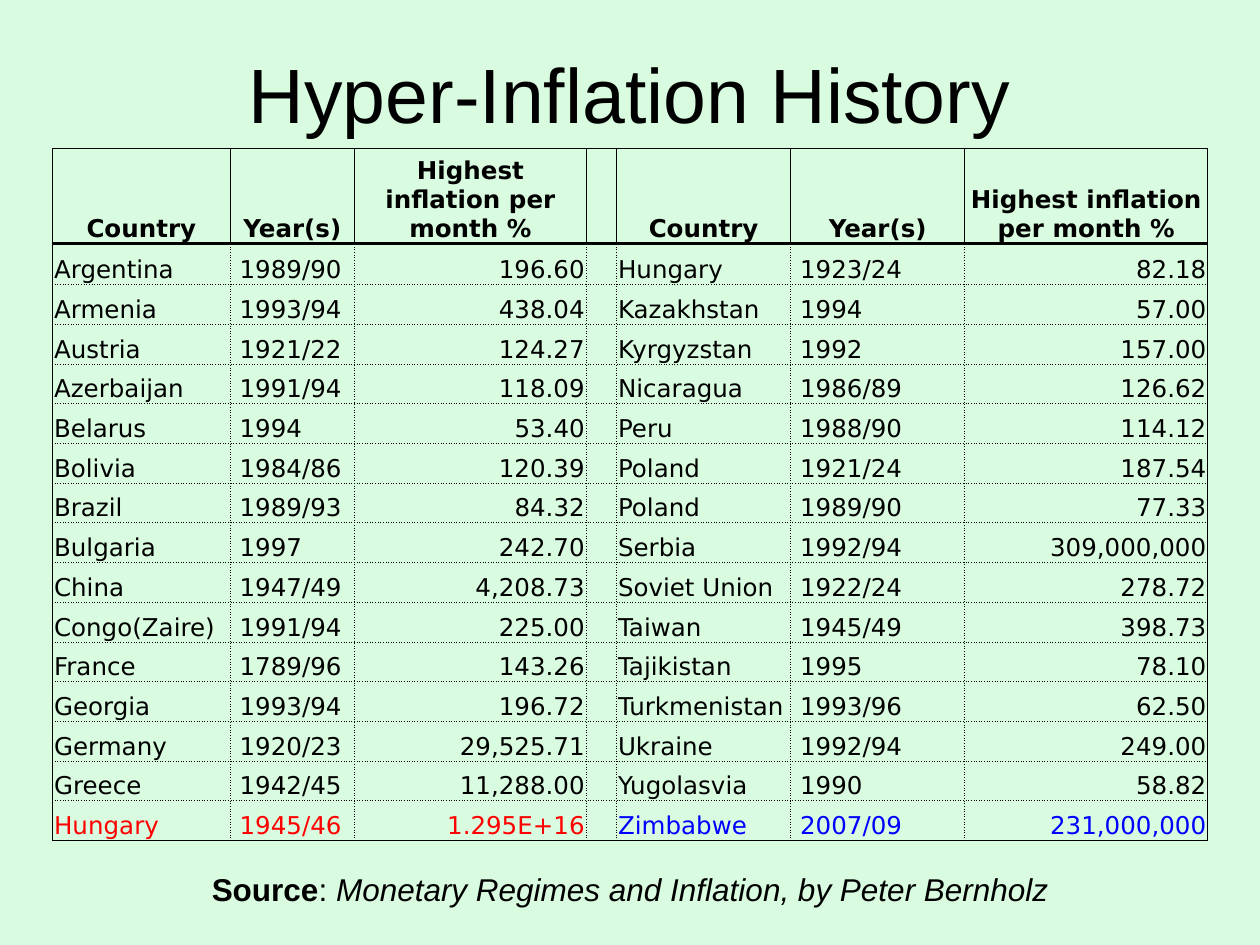
from lxml import etree
from pptx import Presentation
from pptx.dml.color import RGBColor
from pptx.enum.text import MSO_ANCHOR, PP_ALIGN
from pptx.oxml.ns import qn
from pptx.util import Cm, Pt

LEFT, CENTER, RIGHT = PP_ALIGN.LEFT, PP_ALIGN.CENTER, PP_ALIGN.RIGHT
MIDDLE, BOTTOM = MSO_ANCHOR.MIDDLE, MSO_ANCHOR.BOTTOM

MINT = RGBColor(0xD9, 0xFB, 0xDF)
BLACK = RGBColor(0, 0, 0)
RED = RGBColor(0xFF, 0, 0)
BLUE = RGBColor(0, 0, 0xFF)

SOLID, DOTTED, THICK = (0.5, "solid"), (0.5, "sysDot"), (2, "solid")

WIDTHS = [3.58, 2.51, 4.67, 0.61, 3.51, 3.51, 4.9]
HEAD_H, FIRST_H, ROW_H = 1.91, 0.84, 0.8
GAP = 3  # empty column between the two halves

HEADS = ["Country", "Year(s)", "Highest inflation per month %"]
ROWS = [
    ("Argentina", "1989/90", "196.60", "Hungary", "1923/24", "82.18"),
    ("Armenia", "1993/94", "438.04", "Kazakhstan", "1994", "57.00"),
    ("Austria", "1921/22", "124.27", "Kyrgyzstan", "1992", "157.00"),
    ("Azerbaijan", "1991/94", "118.09", "Nicaragua", "1986/89", "126.62"),
    ("Belarus", "1994", "53.40", "Peru", "1988/90", "114.12"),
    ("Bolivia", "1984/86", "120.39", "Poland", "1921/24", "187.54"),
    ("Brazil", "1989/93", "84.32", "Poland", "1989/90", "77.33"),
    ("Bulgaria", "1997", "242.70", "Serbia", "1992/94", "309,000,000"),
    ("China", "1947/49", "4,208.73", "Soviet Union", "1922/24", "278.72"),
    ("Congo(Zaire)", "1991/94", "225.00", "Taiwan", "1945/49", "398.73"),
    ("France", "1789/96", "143.26", "Tajikistan", "1995", "78.10"),
    ("Georgia", "1993/94", "196.72", "Turkmenistan", "1993/96", "62.50"),
    ("Germany", "1920/23", "29,525.71", "Ukraine", "1992/94", "249.00"),
    ("Greece", "1942/45", "11,288.00", "Yugolasvia", "1990", "58.82"),
    ("Hungary", "1945/46", "1.295E+16", "Zimbabwe", "2007/09", "231,000,000"),
]


def set_font(font, name, size, color=BLACK, bold=False):
    font.name, font.size, font.bold = name, Pt(size), bold
    font.color.rgb = color


def add_text(slide, x, y, w, h, anchor, align):
    """Add a wrapping text box and return its first paragraph."""
    frame = slide.shapes.add_textbox(Cm(x), Cm(y), Cm(w), Cm(h)).text_frame
    frame.word_wrap = True
    frame.vertical_anchor = anchor
    para = frame.paragraphs[0]
    para.alignment = align
    return para


def add_title(slide, x, y, w, h):
    para = add_text(slide, x, y, w, h, MIDDLE, CENTER)
    para.text = "Hyper-Inflation History"
    set_font(para.font, "Arial", 44)


def add_source(slide, x, y, w, h):
    para = add_text(slide, x, y, w, h, BOTTOM, LEFT)
    set_font(para.font, "Arial", 18)
    parts = [("Source", True, False), (": ", False, False),
             ("Monetary Regimes and Inflation, by Peter Bernholz", False, True)]
    for text, bold, italic in parts:
        run = para.add_run()
        run.text = text
        run.font.bold, run.font.italic = bold, italic


def set_border(cell, side, style):
    width, dash = style
    line = etree.SubElement(cell._tc.get_or_add_tcPr(), qn("a:ln" + side),
                            w=str(Pt(width)))
    fill = etree.SubElement(line, qn("a:solidFill"))
    etree.SubElement(fill, qn("a:srgbClr"), val=str(BLACK))
    etree.SubElement(line, qn("a:prstDash"), val=dash)


def set_borders(cell, row, col):
    """Solid frame and header, a thick rule below it, dots inside."""
    last_row, last_col = len(ROWS), len(WIDTHS) - 1
    head = row == 0
    set_border(cell, "L", SOLID if head or col == 0 else DOTTED)
    set_border(cell, "R", SOLID if head or col == last_col else DOTTED)
    set_border(cell, "T", SOLID if head else THICK if row == 1 else DOTTED)
    set_border(cell, "B", THICK if head else
               SOLID if row == last_row else DOTTED)


def fill_cell(cell, text, row, col):
    head = row == 0
    kind = col % (GAP + 1)  # 0 country, 1 years, 2 rate, 3 gap
    color = BLACK
    if row == len(ROWS):
        color = RED if col < GAP else BLUE
    set_borders(cell, row, col)
    cell.fill.background()
    cell.vertical_anchor = BOTTOM
    cell.margin_left = Cm(0.19 if kind == 1 and not head else 0.03)
    cell.margin_right = cell.margin_top = Cm(0.03)
    cell.margin_bottom = 0
    para = cell.text_frame.paragraphs[0]
    para.text = text
    para.alignment = CENTER if head else RIGHT if kind == 2 else LEFT
    set_font(para.font, "DejaVu Sans", 14, color, head)


def add_rates(slide, x, y):
    heights = [HEAD_H, FIRST_H] + [ROW_H] * (len(ROWS) - 1)
    table = slide.shapes.add_table(
        len(heights), len(WIDTHS), Cm(x), Cm(y),
        Cm(sum(WIDTHS)), Cm(sum(heights))).table
    table.first_row = table.horz_banding = False
    for column, width in zip(table.columns, WIDTHS):
        column.width = Cm(width)
    for row, height in zip(table.rows, heights):
        row.height = Cm(height)
    for r, values in enumerate([HEADS * 2] + ROWS):
        texts = [*values[:GAP], "", *values[GAP:]]
        for c, text in enumerate(texts):
            fill_cell(table.cell(r, c), text, r, c)


def main():
    deck = Presentation()
    deck.slide_width, deck.slide_height = Cm(25.4), Cm(19.05)
    slide = deck.slides.add_slide(deck.slide_layouts[6])
    slide.background.fill.solid()
    slide.background.fill.fore_color.rgb = MINT

    add_rates(slide, 1.06, 2.99)
    add_source(slide, 4.02, 17.4, 17.78, 1.02)
    add_title(slide, 1.27, 0.76, 22.86, 2.21)
    deck.save("out.pptx")


if __name__ == "__main__":
    main()
